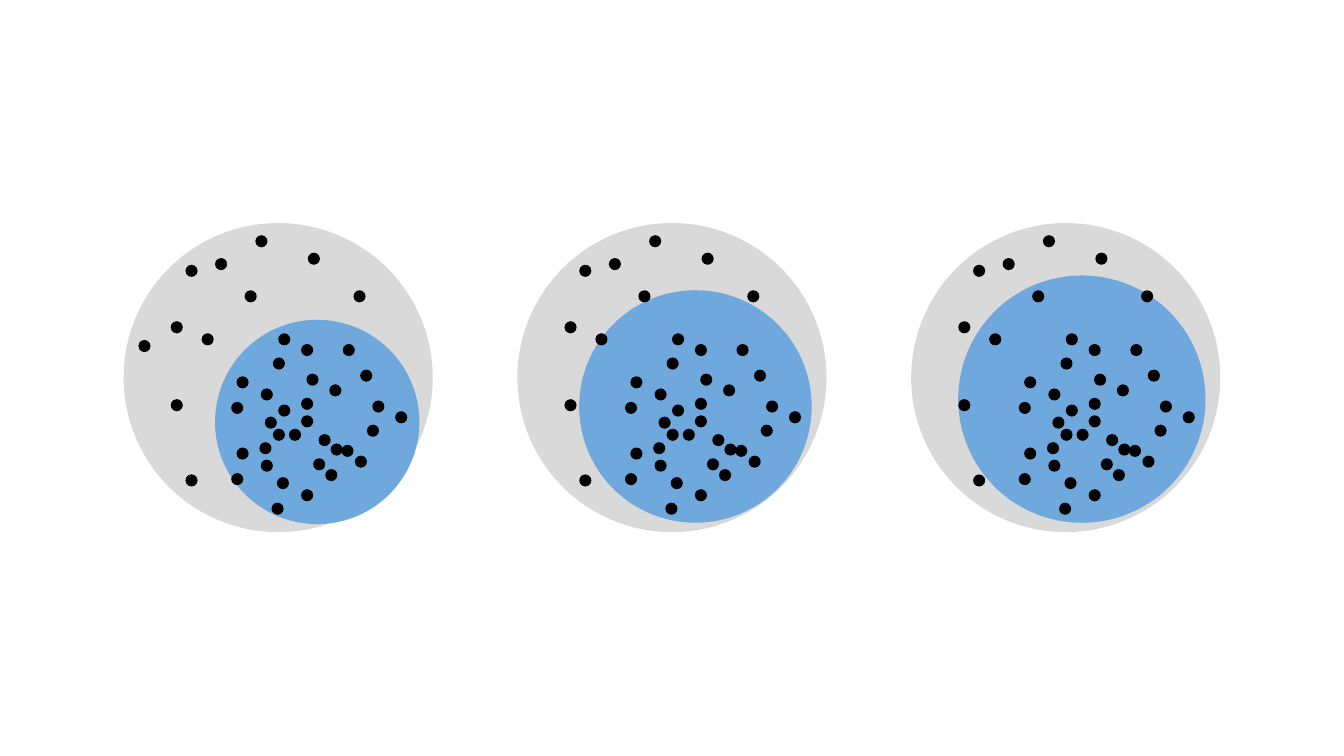
from pptx import Presentation
from pptx.dml.color import RGBColor
from pptx.enum.shapes import MSO_SHAPE as Shape
from pptx.util import Inches

COLORS = {"outer": "D9D9D9", "inner": "6FA8DC", "dot": "000000"}
STEP = 2.93  # distance from one panel to the next
DOT = 0.09

# Left, top and size of the blue disc in each panel
inners = [(1.60, 2.38, 1.52), (4.31, 2.16, 1.73), (7.13, 2.05, 1.84)]

# Dot places are those of the first panel
lone = (1.03, 2.53)  # only in the first panel
sparse = [
    (1.60, 1.92), (2.63, 2.16), (1.50, 2.48), lone, (1.38, 3.53), (1.27, 2.97),
    (1.27, 2.39), (1.38, 1.97), (1.90, 1.75), (1.82, 2.16),
]
last = (2.29, 1.88)  # lies above the dense group

# The dense part repeats one cluster of six dots, plus two single dots
cluster = [
    (2.07, 2.48), (2.24, 2.56), (2.03, 2.66),
    (1.76, 2.80), (1.94, 2.89), (1.72, 2.99),
]
shifts = [(0, 0), (0.21, 0.30), (0.30, 0.75), (0, 0.53), (0.70, 0.50)]
dense = [(x + dx, y + dy) for dx, dy in shifts for x, y in cluster]
dense += [(2.68, 2.75), (2.55, 2.56)]


def add_disc(shapes, x, y, size, color):
    disc = shapes.add_shape(
        Shape.OVAL, Inches(x), Inches(y), Inches(size), Inches(size)
    )
    disc.shadow.inherit = False
    disc.fill.solid()
    disc.fill.fore_color.rgb = RGBColor.from_string(COLORS[color])
    disc.line.fill.background()


deck = Presentation()
deck.slide_width = Inches(10)
deck.slide_height = Inches(10 * 9 / 16)
slide = deck.slides.add_slide(deck.slide_layouts[6])

for panel, inner in enumerate(inners):
    left = panel * STEP
    add_disc(slide.shapes, 0.92 + left, 1.66, 2.3, "outer")
    add_disc(slide.shapes, *inner, "inner")
    for x, y in sparse:
        if panel == 0 or (x, y) != lone:
            add_disc(slide.shapes, x + left, y, DOT, "dot")
    group = slide.shapes.add_group_shape()
    for x, y in dense:
        add_disc(group.shapes, x + left, y, DOT, "dot")
    add_disc(slide.shapes, last[0] + left, last[1], DOT, "dot")

deck.save("out.pptx")
